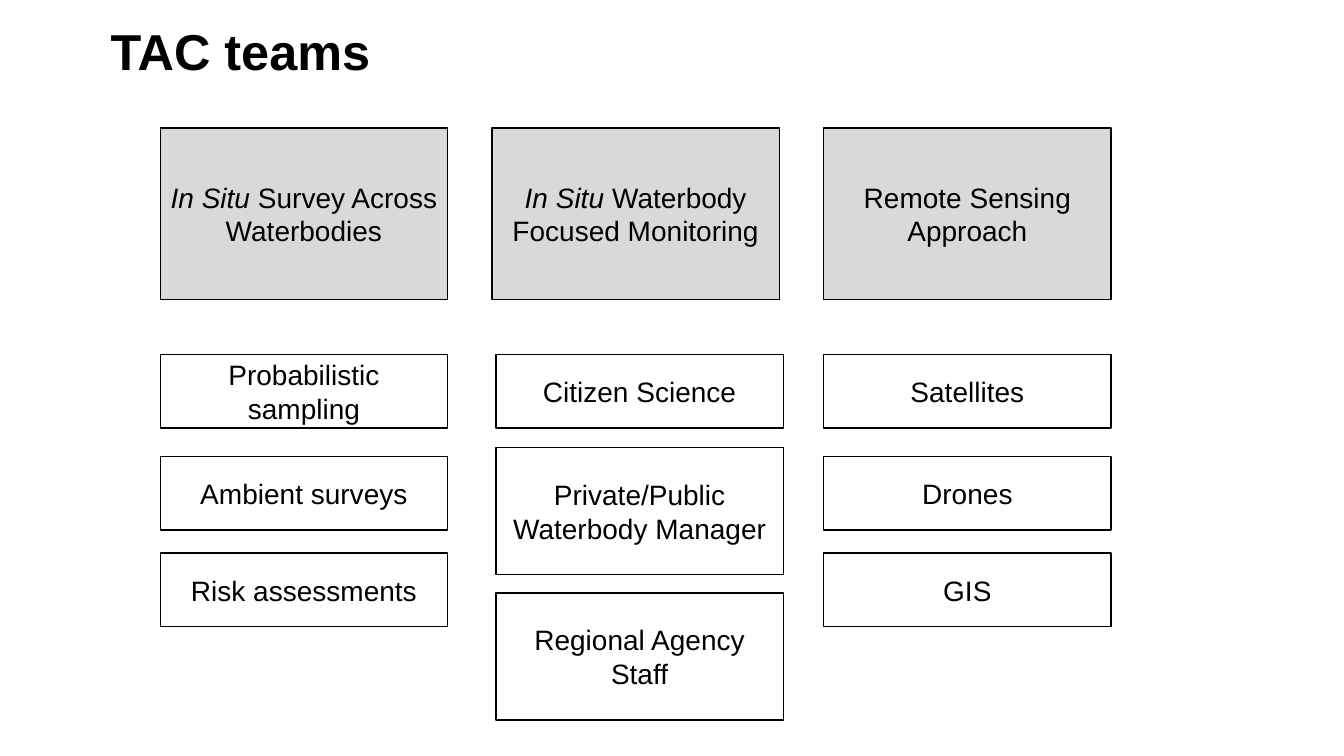
from pptx import Presentation
from pptx.dml.color import RGBColor
from pptx.enum.shapes import MSO_SHAPE
from pptx.enum.text import MSO_ANCHOR, MSO_AUTO_SIZE, PP_ALIGN
from pptx.util import Cm, Pt

RECTANGLE = MSO_SHAPE.RECTANGLE
MIDDLE = MSO_ANCHOR.MIDDLE
NO_AUTOFIT = MSO_AUTO_SIZE.NONE
LEFT, CENTER = PP_ALIGN.LEFT, PP_ALIGN.CENTER

BLACK, WHITE, GREY = "000000", "FFFFFF", "D9D9D9"
BOX_WIDTH = 7.24
FIRST_LEFT, COLUMN_PITCH = 4.04, 8.36
HEADER_TOP, HEADER_HEIGHT = 3.23, 4.32
LOW, TALL = 1.85, 3.2


def color(hex_string):
    return RGBColor.from_string(hex_string)


def add_box(left, top, height, fill, text, italic_lead=""):
    """Add a bordered box; italic_lead is set in italics before the text."""
    box = page.shapes.add_shape(RECTANGLE, Cm(left), Cm(top), Cm(BOX_WIDTH), Cm(height))
    box.shadow.inherit = False
    box.fill.solid()
    box.fill.fore_color.rgb = color(fill)
    box.line.color.rgb = color(BLACK)
    box.line.width = Pt(1)
    frame = box.text_frame
    frame.word_wrap = True
    frame.vertical_anchor = MIDDLE
    para = frame.paragraphs[0]
    para.alignment = CENTER
    para.font.name = "Arial"
    para.font.size = Pt(20)
    para.font.color.rgb = color(BLACK)
    if italic_lead:
        lead = para.add_run()
        lead.text = italic_lead
        lead.font.italic = True
    para.add_run().text = text


deck = Presentation()
deck.slide_width, deck.slide_height = Cm(33.87), Cm(19.05)
page = deck.slides.add_slide(deck.slide_layouts[5])

title = page.shapes.title
title.left, title.top, title.width, title.height = Cm(0), Cm(0), Cm(33.87), Cm(2.54)
title_frame = title.text_frame
title_frame.text = "TAC teams"
title_frame.auto_size = NO_AUTOFIT
title_frame.vertical_anchor = MIDDLE
title_frame.margin_left = Cm(2.79)
title_para = title_frame.paragraphs[0]
title_para.alignment = LEFT
title_para.font.name = "Arial"
title_para.font.size = Pt(36)
title_para.font.bold = True
title_para.font.color.rgb = color(BLACK)

# Each team: italic lead, name, shift of its topics, topics as (text, top, height)
teams = [
    ("In Situ ", "Survey Across Waterbodies", 0, [
        ("Probabilistic sampling", 8.94, LOW),
        ("Ambient surveys", 11.51, LOW),
        ("Risk assessments", 13.94, LOW),
    ]),
    ("In Situ ", "Waterbody Focused Monitoring", 0.1, [
        ("Citizen Science", 8.94, LOW),
        ("Private/Public Waterbody Manager", 11.28, TALL),
        ("Regional Agency Staff", 14.94, TALL),
    ]),
    ("", "Remote Sensing Approach", 0, [
        ("Satellites", 8.94, LOW),
        ("Drones", 11.51, LOW),
        ("GIS", 13.94, LOW),
    ]),
]

for column, (italic_lead, name, shift, topics) in enumerate(teams):
    left = FIRST_LEFT + column * COLUMN_PITCH
    add_box(left, HEADER_TOP, HEADER_HEIGHT, GREY, name, italic_lead)
    for topic, top, height in topics:
        add_box(left + shift, top, height, WHITE, topic)

deck.save("out.pptx")
